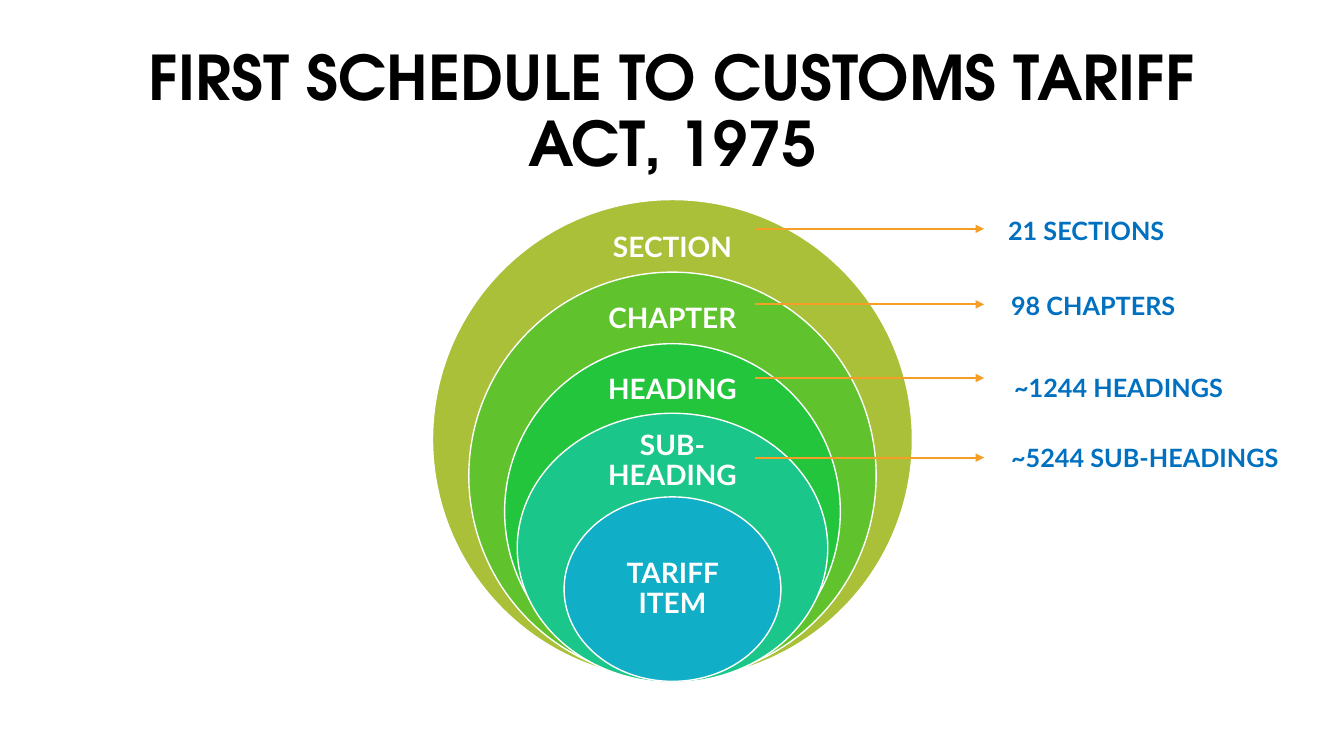
"""Build a slide of nested circles showing the levels of the customs tariff schedule."""
from lxml.etree import SubElement
from pptx import Presentation
from pptx.dml.color import RGBColor
from pptx.enum.shapes import MSO_CONNECTOR, MSO_SHAPE
from pptx.enum.text import MSO_ANCHOR, MSO_AUTO_SIZE, PP_ALIGN
from pptx.oxml.ns import qn
from pptx.util import Inches, Pt

TITLE = "FIRST SCHEDULE TO CUSTOMS TARIFF ACT, 1975"
COLOURS = {
    "title": "000000", "white": "FFFFFF", "arrow": "F59F26", "count": "0070C0",
    "section": "A9C038", "chapter": "60C32D", "heading": "23C53C",
    "subheading": "1AC689", "item": "11AEC7",
}
# text, colour, circle (top, width, height), label (top, width, height)
LEVELS = [
    ("SECTION", "section", (1.98, 4.76, 4.76), (2.22, 1.78, 0.48)),
    ("CHAPTER", "chapter", (2.7, 4.04, 4.04), (2.93, 1.74, 0.47)),
    ("HEADING", "heading", (3.41, 3.33, 3.33), (3.64, 1.72, 0.46)),
    ("SUB-HEADING", "subheading", (4.1, 3.08, 2.67), (4.34, 1.66, 0.48)),
    ("TARIFF ITEM", "item", (4.93, 2.15, 1.83), (5.39, 1.52, 0.91)),
]
# text, arrow height, text box (left, top, width)
COUNTS = [
    ("21 SECTIONS", 2.27, (9.9, 2.09, 1.85)),
    ("98 CHAPTERS", 3.02, (9.93, 2.83, 2.07)),
    ("~1244 HEADINGS", 3.75, (9.96, 3.64, 2.63)),
    ("~5244 SUB-HEADINGS", 4.54, (9.93, 4.34, 2.92)),
]
CENTRE = 6.67
ARROW_START, ARROW_END = 7.49, 9.76
COUNT_HEIGHT = 0.4
LABEL_MARGIN = 0.16
FORMATS = {
    "title": {"name": "TeX Gyre Adventor", "size": Pt(44), "bold": True},
    "label": {"name": "Lato", "size": Pt(20), "bold": True},
    "count": {"name": "Lato", "size": Pt(18), "bold": True},
}


def colour(name):
    return RGBColor.from_string(COLOURS[name])


def write(box, text, style, ink, centred=True):
    frame = box.text_frame
    frame.word_wrap = True
    para = frame.paragraphs[0]
    span = para.add_run()
    span.text = text
    for key, value in FORMATS[style].items():
        setattr(span.font, key, value)
    span.font.color.rgb = colour(ink)
    if centred:
        frame.vertical_anchor = MSO_ANCHOR.MIDDLE
        para.alignment = PP_ALIGN.CENTER
        para.line_spacing = 0.9


def centred_at(top, width, height):
    return [Inches(value) for value in (CENTRE - width / 2, top, width, height)]


def add_level(page, text, fill, circle, label):
    ellipse = page.shapes.add_shape(MSO_SHAPE.OVAL, *centred_at(*circle))
    ellipse.shadow.inherit = False
    ellipse.fill.solid()
    ellipse.fill.fore_color.rgb = colour(fill)
    ellipse.line.color.rgb = colour("white")
    ellipse.line.width = Pt(1)
    box = page.shapes.add_textbox(*centred_at(*label))
    for side in ("left", "top", "right", "bottom"):
        setattr(box.text_frame, f"margin_{side}", Inches(LABEL_MARGIN))
    write(box, text, "label", "white")


def add_arrow(page, height):
    arrow = page.shapes.add_connector(
        MSO_CONNECTOR.STRAIGHT, Inches(ARROW_START), Inches(height),
        Inches(ARROW_END), Inches(height))
    arrow.line.color.rgb = colour("arrow")
    arrow.line.width = Pt(1.5)
    SubElement(arrow.line._get_or_add_ln(), qn("a:tailEnd"), type="triangle")
    SubElement(arrow._element.spPr, qn("a:effectLst"))


def add_count(page, text, left, top, width):
    box = page.shapes.add_textbox(
        *[Inches(value) for value in (left, top, width, COUNT_HEIGHT)])
    write(box, text, "count", "count", centred=False)
    box.text_frame.auto_size = MSO_AUTO_SIZE.SHAPE_TO_FIT_TEXT


def main():
    deck = Presentation()
    deck.slide_width, deck.slide_height = Inches(13.33), Inches(7.5)
    page = deck.slides.add_slide(deck.slide_layouts[5])
    title = page.shapes.title
    title.left, title.top = Inches(0.92), Inches(0.4)
    title.width, title.height = Inches(11.5), Inches(1.45)
    write(title, TITLE, "title", "title")
    title.text_frame.auto_size = MSO_AUTO_SIZE.NONE
    for level in LEVELS:
        add_level(page, *level)
    for text, height, place in COUNTS:
        add_arrow(page, height)
        add_count(page, text, *place)
    deck.save("out.pptx")


if __name__ == "__main__":
    main()
